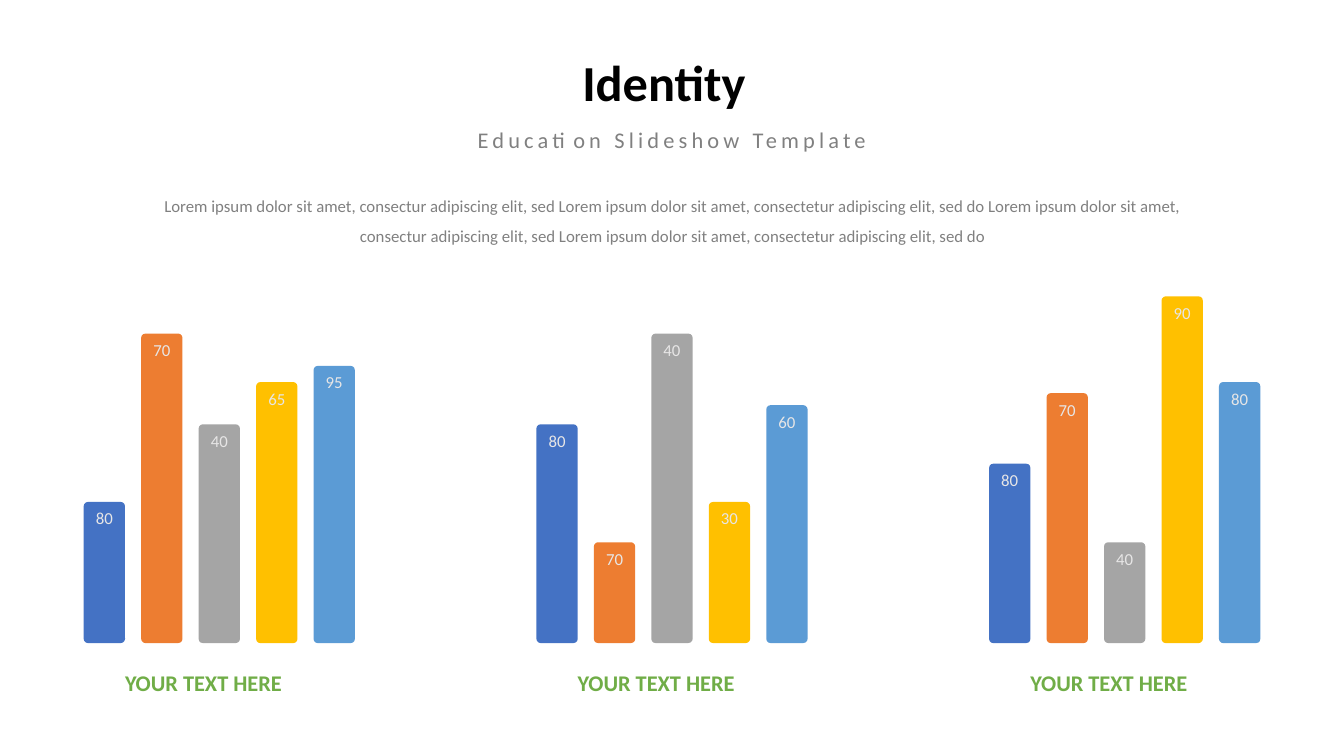
from pptx import Presentation
from pptx.dml.color import RGBColor
from pptx.enum.shapes import MSO_SHAPE
from pptx.enum.text import MSO_ANCHOR, MSO_AUTO_SIZE, PP_ALIGN
from pptx.util import Inches, Pt

COLORS = {
    "blue": "4472C4",
    "orange": "ED7D31",
    "gray": "A5A5A5",
    "yellow": "FFC000",
    "sky": "5B9BD5",
    "green": "70AD47",
    "label": "E7E6E6",
    "muted": "808080",
    "black": "000000",
}
BAR_COLORS = ["blue", "orange", "gray", "yellow", "sky"]

# Each bar is (label, height); the labels do not set the heights
BAR_GROUPS = [
    [("80", 1.4), ("70", 3.07), ("40", 2.17), ("65", 2.59), ("95", 2.75)],
    [("80", 2.17), ("70", 1.0), ("40", 3.07), ("30", 1.4), ("60", 2.36)],
    [("80", 1.78), ("70", 2.48), ("40", 1.0), ("90", 3.44), ("80", 2.59)],
]
GROUP_LEFT, GROUP_STEP = 0.83, 4.49
BAR_WIDTH, BAR_STEP, BASELINE = 0.41, 0.57, 6.38

INTRO = (
    "Lorem ipsum dolor sit amet, consectur adipiscing elit, sed "
    "Lorem ipsum dolor sit amet, consectetur adipiscing elit, sed do "
    "Lorem ipsum dolor sit amet, consectur adipiscing elit, sed "
    "Lorem ipsum dolor sit amet, consectetur adipiscing elit, sed do"
)


def rgb(name):
    return RGBColor.from_string(COLORS[name])


def write_text(shape, text, size=12, color="muted", bold=False, align=PP_ALIGN.CENTER,
               anchor=MSO_ANCHOR.TOP, inset=0, wrap=True, line_spacing=1.0, tracking=None):
    """Fill a shape with one formatted paragraph; tracking is in points."""
    frame = shape.text_frame
    frame.auto_size = MSO_AUTO_SIZE.NONE
    frame.word_wrap = wrap
    frame.vertical_anchor = anchor
    frame.margin_left = frame.margin_right = Inches(inset)
    frame.margin_top = frame.margin_bottom = Inches(inset)
    para = frame.paragraphs[0]
    para.alignment = align
    para.line_spacing = line_spacing
    span = para.add_run()
    span.text = text
    span.font.name = "Calibri"
    span.font.size = Pt(size)
    span.font.bold = bold
    span.font.color.rgb = rgb(color)
    if tracking:
        span.font._element.set("spc", str(tracking * 100))


def add_text(page, text, left, top, width, height, **text_format):
    box = page.shapes.add_textbox(Inches(left), Inches(top), Inches(width), Inches(height))
    write_text(box, text, **text_format)


def add_title(page, text):
    title = page.shapes.title
    title.left, title.top = Inches(5.45), Inches(0.46)
    title.width, title.height = Inches(2.27), Inches(0.71)
    write_text(title, text, size=36, color="black", bold=True, inset=0.05)


def add_bar(page, label, left, height, color):
    bar = page.shapes.add_shape(
        MSO_SHAPE.ROUNDED_RECTANGLE,
        Inches(left), Inches(BASELINE - height), Inches(BAR_WIDTH), Inches(height))
    bar.adjustments[0] = 0.102
    bar.shadow.inherit = False
    bar.fill.solid()
    bar.fill.fore_color.rgb = rgb(color)
    bar.line.fill.background()
    write_text(bar, label, color="label", inset=0.05)


def add_bar_group(page, bars, left):
    for index, ((label, height), color) in enumerate(zip(bars, BAR_COLORS)):
        add_bar(page, label, left + index * BAR_STEP, height, color)
    add_text(page, "YOUR TEXT HERE", left + BAR_WIDTH, 6.64, 2.07, 0.27,
             size=16, color="green", bold=True, align=PP_ALIGN.LEFT, wrap=False)


def main():
    deck = Presentation()
    deck.slide_width, deck.slide_height = Inches(13.33), Inches(7.5)
    page = deck.slides.add_slide(deck.slide_layouts.get_by_name("Title Only"))

    # Heading and introduction
    add_title(page, "Identity")
    add_text(page, "Education Slideshow Template", 4.22, 1.25, 4.89, 0.27,
             size=16, wrap=False, tracking=3)
    add_text(page, INTRO, 1.33, 1.84, 10.69, 0.57, line_spacing=1.5)

    # Three groups of bars with captions
    for index, bars in enumerate(BAR_GROUPS):
        add_bar_group(page, bars, GROUP_LEFT + index * GROUP_STEP)

    deck.save("out.pptx")


if __name__ == "__main__":
    main()
